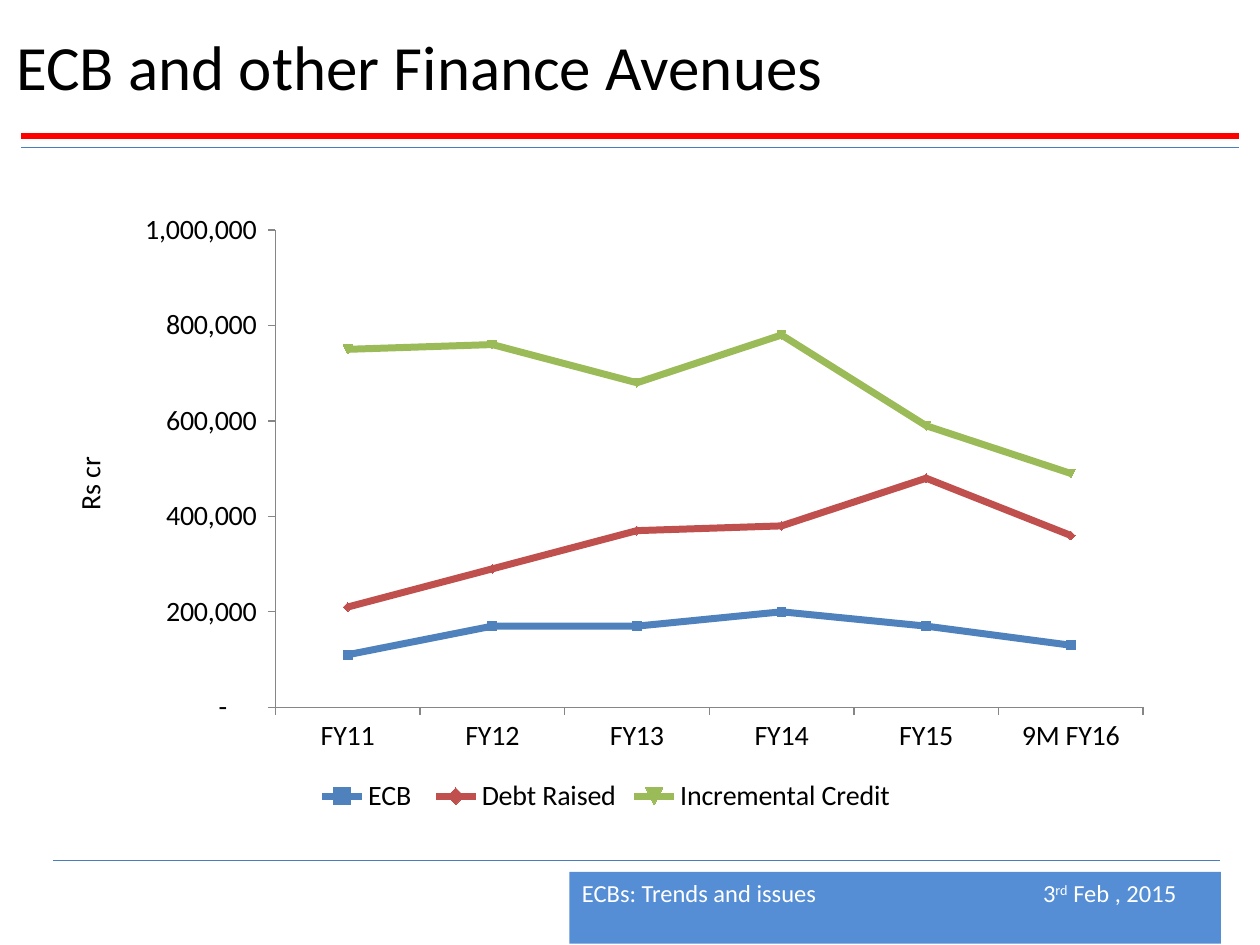
from lxml.etree import SubElement
from pptx import Presentation
from pptx.chart.data import CategoryChartData
from pptx.dml.color import RGBColor
from pptx.enum.chart import XL_CHART_TYPE, XL_LEGEND_POSITION, XL_TICK_MARK
from pptx.enum.shapes import MSO_CONNECTOR, MSO_SHAPE
from pptx.enum.text import MSO_ANCHOR, PP_ALIGN
from pptx.oxml import parse_xml
from pptx.oxml.ns import nsdecls, qn
from pptx.util import Inches, Pt

FONT = "Calibri"
HUES = {"red": "FF0000", "rule": "4B7EBC", "bar": "558ED5", "text": "000000",
        "white": "FFFFFF", "axis": "868686"}
YEARS = ["FY11", "FY12", "FY13", "FY14", "FY15", "9M FY16"]
SERIES = [
    ("ECB ", "4F81BD", [110000, 170000, 170000, 200000, 170000, 130000]),
    ("Debt Raised", "C0504D", [210000, 290000, 370000, 380000, 480000, 360000]),
    ("Incremental Credit ", "9BBB59", [750000, 760000, 680000, 780000, 590000, 490000]),
]
PLOT = {"x": 0.2, "y": 0.05, "w": 0.78, "h": 0.77}


def color(name):
    return RGBColor.from_string(HUES.get(name, name))


def box(left, top, width, height):
    return [Inches(v) for v in (left, top, width, height)]


def style(font, size, hue):
    font.name = FONT
    font.size = Pt(size)
    font.color.rgb = color(hue)


def add_rule(slide, left, right, top, hue, width):
    line = slide.shapes.add_connector(
        MSO_CONNECTOR.STRAIGHT, *box(left, top, right, top))
    line.line.color.rgb = color(hue)
    line.line.width = Pt(width)
    SubElement(line._element.spPr, qn("a:effectLst"))


def add_title(slide, text):
    title = slide.shapes.title
    title.left, title.top, title.width, title.height = box(0.03, 0.03, 9.97, 0.97)
    title.line.color.rgb = color("white")
    title.line.width = Pt(0.75)
    frame = title.text_frame
    frame.text = text
    frame.vertical_anchor = MSO_ANCHOR.MIDDLE
    para = frame.paragraphs[0]
    para.alignment = PP_ALIGN.LEFT
    style(para.font, 36, "text")


def add_footer(slide, label, day, suffix, rest):
    bar = slide.shapes.add_shape(MSO_SHAPE.RECTANGLE, *box(4.52, 6.92, 5.17, 0.57))
    bar.shadow.inherit = False
    bar.fill.solid()
    bar.fill.fore_color.rgb = color("bar")
    bar.line.fill.background()
    frame = bar.text_frame
    frame.word_wrap = True
    frame.vertical_anchor = MSO_ANCHOR.TOP
    para = frame.paragraphs[0]
    para.alignment = PP_ALIGN.LEFT
    tabs = SubElement(para._p.get_or_add_pPr(), qn("a:tabLst"))
    SubElement(tabs, qn("a:tab"), pos=str(Inches(3.66)), algn="l")
    style(para.font, 14, "white")
    for text in (f"{label}\t{day}", suffix, rest):
        run = para.add_run()
        run.text = text
        if text == suffix:
            run.font._element.set("baseline", "30000")


def fix_plot(chart):
    tags = "".join(f'<c:{k} val="{v}"/>' for k, v in PLOT.items())
    node = parse_xml(
        f'<c:layout {nsdecls("c")}><c:manualLayout><c:layoutTarget val="inner"/>'
        f'<c:xMode val="edge"/><c:yMode val="edge"/>{tags}'
        "</c:manualLayout></c:layout>")
    area = chart._chartSpace.chart.plotArea
    for old in area.findall(qn("c:layout")):
        area.remove(old)
    area.insert(0, node)


def set_axes(chart):
    for axis in (chart.category_axis, chart.value_axis):
        axis.has_major_gridlines = False
        axis.major_tick_mark = XL_TICK_MARK.OUTSIDE
        axis.minor_tick_mark = XL_TICK_MARK.NONE
        axis.format.line.color.rgb = color("axis")
        axis.format.line.width = Pt(0.75)
    axis = chart.value_axis
    axis.minimum_scale, axis.maximum_scale, axis.major_unit = 0, 1000000, 200000
    axis.tick_labels.number_format = '_(* #,##0_);_(* \\(#,##0\\);_(* "-"??_);_('
    axis.tick_labels.number_format_is_linked = False
    frame = axis.axis_title.text_frame
    frame.text = "Rs cr"
    style(frame.paragraphs[0].font, 16, "text")
    frame.paragraphs[0].font.bold = False


def add_lines(slide):
    data = CategoryChartData(number_format="#,##0")
    data.categories = YEARS
    for name, _, vals in SERIES:
        data.add_series(name, vals)
    chart = slide.shapes.add_chart(
        XL_CHART_TYPE.LINE_MARKERS, *box(0.42, 1.58, 8.83, 4.92), data).chart
    style(chart.font, 16, "text")
    chart.has_title = False
    chart.has_legend = True
    chart.legend.position = XL_LEGEND_POSITION.BOTTOM
    chart.legend.include_in_layout = False
    chart.plots[0].vary_by_categories = False
    set_axes(chart)
    fix_plot(chart)
    for line, (_, hue, _) in zip(chart.plots[0].series, SERIES):
        line.smooth = False
        line.format.line.color.rgb = color(hue)
        line.format.line.width = Pt(4)
        line.marker.size = 5
        mark = line.marker.format
        mark.fill.solid()
        mark.fill.fore_color.rgb = color(hue)
        mark.line.color.rgb = color(hue)


def main():
    deck = Presentation()
    deck.slide_width, deck.slide_height = Inches(10), Inches(7.5)
    slide = deck.slides.add_slide(deck.slide_layouts[5])
    add_title(slide, "ECB and other Finance Avenues")
    add_rule(slide, 0.17, 9.83, 1.08, "red", 3)
    add_rule(slide, 0.17, 9.83, 1.17, "rule", 0.75)
    add_rule(slide, 0.42, 9.68, 6.83, "rule", 0.75)
    add_footer(slide, "ECBs: Trends and issues", "3", "rd", " Feb , 2015")
    add_lines(slide)
    deck.save("out.pptx")


if __name__ == "__main__":
    main()
